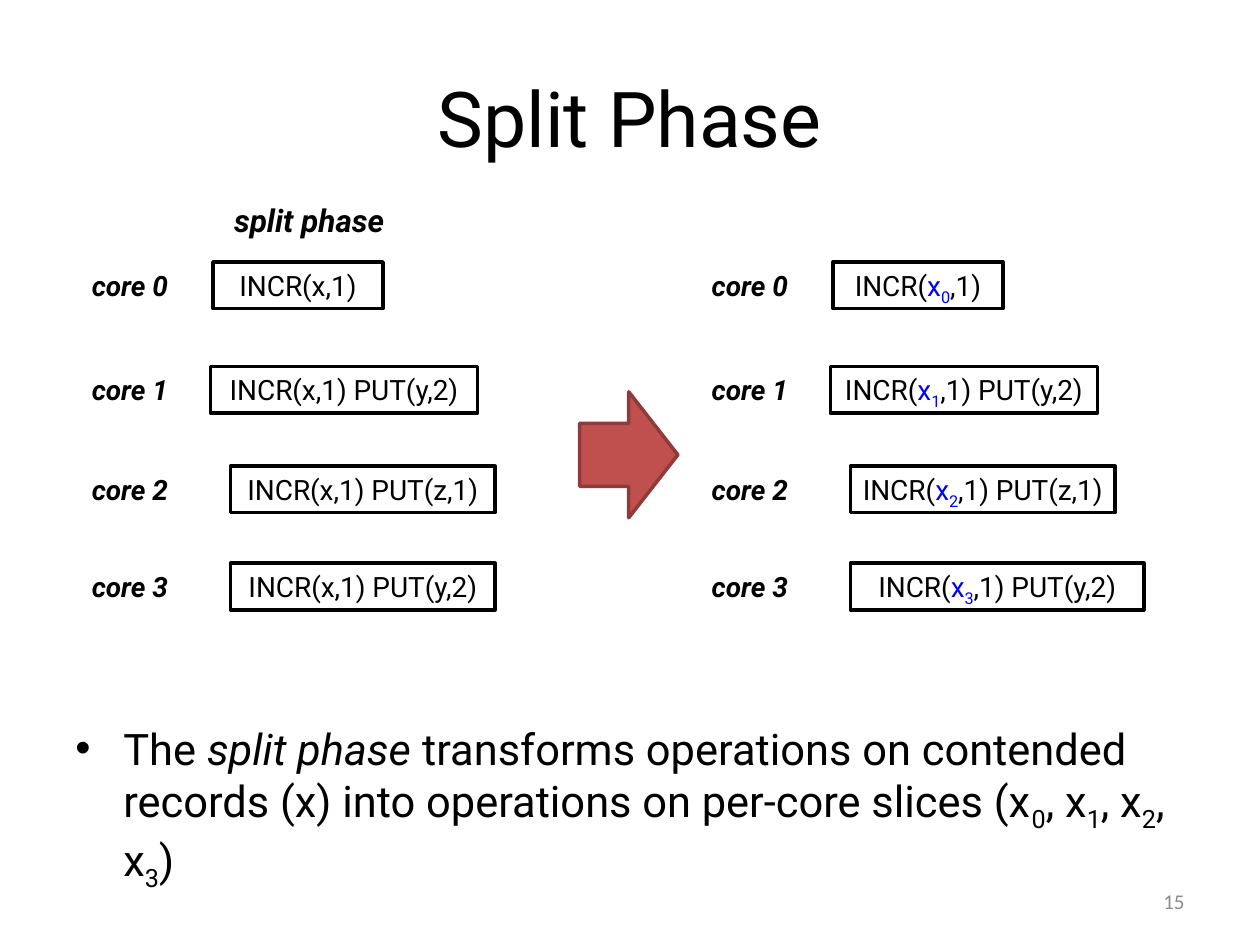
from lxml import etree
from pptx import Presentation
from pptx.dml.color import RGBColor
from pptx.enum.shapes import MSO_SHAPE
from pptx.enum.text import MSO_ANCHOR, PP_ALIGN
from pptx.oxml.ns import qn
from pptx.util import Inches, Pt

BLACK, WHITE, BLUE, GREY = "000000", "FFFFFF", "0000FF", "8C8C8C"
RED, DARK_RED = "C0504D", "8E3B39"
SUB = {"sub": True}
SLICE = {"color": BLUE}

# operations after "INCR(x", row top, box left, box width before and after the split
CORES = [
    (",1)", 2.08, 1.69, 1.35, 1.35),
    (",1) PUT(y,2)", 2.91, 1.67, 2.12, 2.12),
    (",1) PUT(z,1)", 3.7, 1.83, 2.1, 2.1),
    (",1) PUT(y,2)", 4.47, 1.83, 2.1, 2.33),
]
LABEL_LEFT, LABEL_W, ROW_H = 0.63, 0.92, 0.37
SIDE_SHIFT = 4.92
BOX_INSET = 0.05

SUMMARY = [
    ("The ", {}),
    ("split phase", {"italic": True}),
    (" transforms operations on contended records (x) into operations on per-core slices (x", {}),
    ("0", SUB), (", x", {}), ("1", SUB), (", x", {}), ("2", SUB), (", x", {}), ("3", SUB), (")", {}),
]


def rgb(color):
    return RGBColor.from_string(color)


def write(shape, runs, size=16, font="Roboto", color=BLACK, bold=False, italic=False,
          align=PP_ALIGN.LEFT, anchor=MSO_ANCHOR.TOP, wrap=True, inset=0.1):
    """Fill a shape with one paragraph; runs is a string or (text, overrides) pairs."""
    tf = shape.text_frame
    tf.word_wrap = wrap
    tf.vertical_anchor = anchor
    tf.margin_left = tf.margin_right = Inches(inset)
    p = tf.paragraphs[0]
    p.alignment = align
    for text, style in [(runs, {})] if isinstance(runs, str) else runs:
        r = p.add_run()
        r.text = text
        r.font.name = font
        r.font.size = Pt(size)
        r.font.bold = bold
        r.font.italic = style.get("italic", italic)
        r.font.color.rgb = rgb(style.get("color", color))
        if style.get("sub"):
            r.font._element.set("baseline", "-25000")
    return p


def add_text(s, at, runs, **fmt):
    return write(s.shapes.add_textbox(*map(Inches, at)), runs, **fmt)


def add_block(s, kind, at, fill, line):
    sp = s.shapes.add_shape(kind, *map(Inches, at))
    sp.shadow.inherit = False
    sp.fill.solid()
    sp.fill.fore_color.rgb = rgb(fill)
    sp.line.color.rgb = rgb(line)
    sp.line.width = Pt(2)
    return sp


def add_bullet(p, indent):
    pPr = p._p.get_or_add_pPr()
    pPr.set("marL", str(Inches(indent)))
    pPr.set("indent", str(-Inches(indent)))
    etree.SubElement(pPr, qn("a:buFont")).set("typeface", "Arial")
    etree.SubElement(pPr, qn("a:buChar")).set("char", "•")


def add_cores(s, after_split):
    shift = SIDE_SHIFT if after_split else 0
    for i, (rest, top, left, width_before, width_after) in enumerate(CORES):
        add_text(s, (LABEL_LEFT + shift, top, LABEL_W, ROW_H), f"core {i}",
                 bold=True, italic=True, wrap=False)
        width = width_after if after_split else width_before
        box = add_block(s, MSO_SHAPE.RECTANGLE, (left + shift, top, width, ROW_H), WHITE, BLACK)
        runs = "INCR(x" + rest
        if after_split:
            runs = [("INCR(", {}), ("x", SLICE), (str(i), SLICE | SUB), (rest, {})]
        write(box, runs, align=PP_ALIGN.CENTER, inset=BOX_INSET)


prs = Presentation()
prs.slide_width, prs.slide_height = Inches(10), Inches(7.5)
s = prs.slides.add_slide(prs.slide_layouts[6])

add_text(s, (0.5, 0.3, 9, 1.25), "Split Phase", size=44,
         align=PP_ALIGN.CENTER, anchor=MSO_ANCHOR.MIDDLE)
add_text(s, (1.76, 1.55, 1.58, 0.4), "split phase", size=18, bold=True, italic=True, wrap=False)
for after_split in (False, True):
    add_cores(s, after_split)
add_block(s, MSO_SHAPE.RIGHT_ARROW, (4.6, 3.11, 0.78, 1), RED, DARK_RED)

summary = add_text(s, (0.5, 5.68, 9.22, 1.16), SUMMARY, size=24.8)
summary.space_before = Pt(5)
add_bullet(summary, 0.38)
add_text(s, (7.17, 6.95, 2.33, 0.4), "15", size=12, font="Calibri", color=GREY,
         align=PP_ALIGN.RIGHT, anchor=MSO_ANCHOR.MIDDLE)

prs.save("out.pptx")
